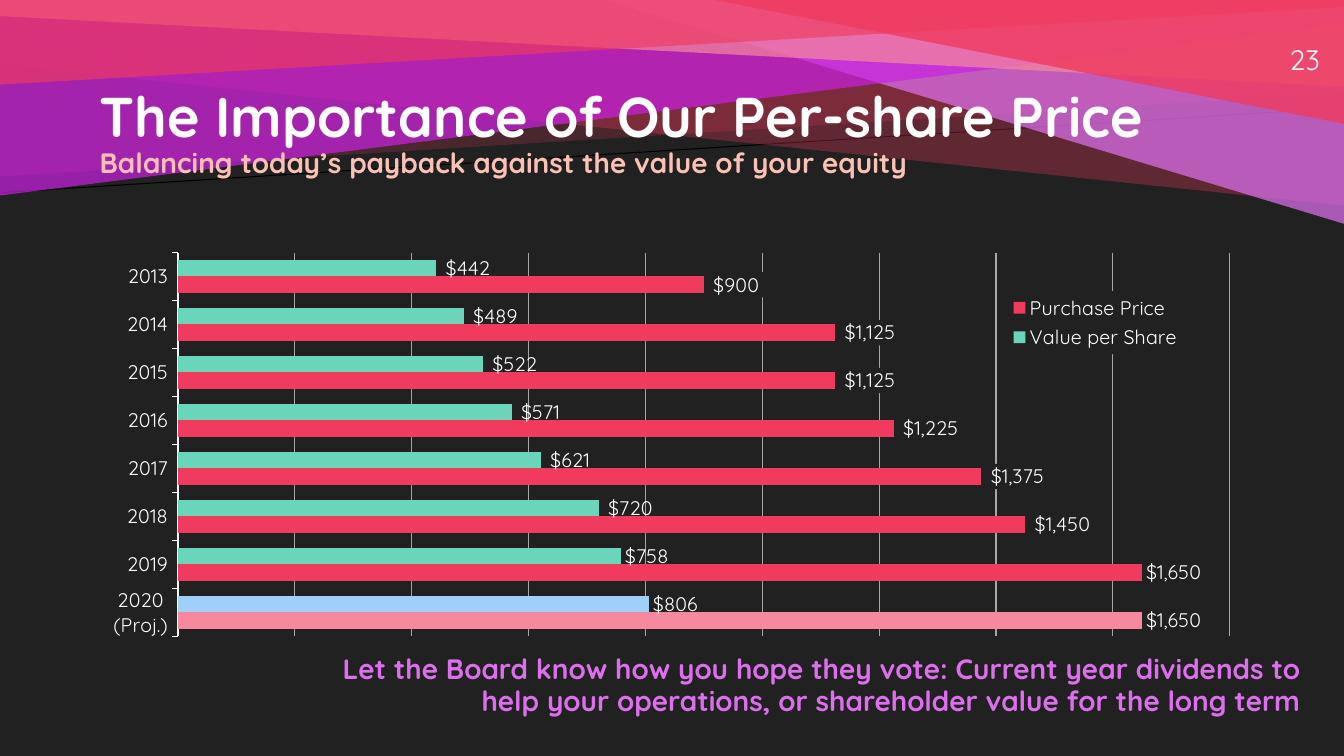
from lxml import etree
from pptx import Presentation
from pptx.chart.data import CategoryChartData
from pptx.dml.color import RGBColor
from pptx.enum.chart import XL_CHART_TYPE, XL_LABEL_POSITION, XL_LEGEND_POSITION, XL_TICK_MARK
from pptx.enum.shapes import MSO_CONNECTOR, MSO_SHAPE
from pptx.enum.text import MSO_ANCHOR, PP_ALIGN
from pptx.oxml import parse_xml
from pptx.oxml.ns import nsdecls, qn
from pptx.util import Inches, Pt

BAR = XL_CHART_TYPE.BAR_CLUSTERED
OUTSIDE_END = XL_LABEL_POSITION.OUTSIDE_END
LEGEND_RIGHT = XL_LEGEND_POSITION.RIGHT
TICK_OUT = XL_TICK_MARK.OUTSIDE
STRAIGHT = MSO_CONNECTOR.STRAIGHT
TRIANGLE = MSO_SHAPE.ISOSCELES_TRIANGLE
BOTTOM = MSO_ANCHOR.BOTTOM
LEFT, RIGHT = PP_ALIGN.LEFT, PP_ALIGN.RIGHT

W, H = 13.33, 7.5
FONT = "Quicksand"
DARK, WHITE, RED, VIOLET, ROSE = "212121", "FFFFFF", "F03B5E", "DC6FEC", "F6899E"
MONEY = '_("$"* #,##0_)'


def rgb(value):
    return RGBColor.from_string(value)


def write(p, text, size=20, color=WHITE, bold=False, shadow=False):
    r = p.add_run()
    r.text = text
    f = r.font
    f.name, f.size, f.bold = FONT, Pt(size), bold
    f.color.rgb = rgb(color)
    if shadow:
        f.fill._xPr.find(qn("a:solidFill")).addnext(parse_xml(
            f'<a:effectLst {nsdecls("a")}><a:outerShdw blurRad="38100" dist="38100" dir="2700000">'
            '<a:srgbClr val="000000"><a:alpha val="60000"/></a:srgbClr></a:outerShdw></a:effectLst>'))
    return r


def chart_layout(x, y, w, h, inner=False):
    target = '<c:layoutTarget val="inner"/>' if inner else ""
    return parse_xml(
        f'<c:layout {nsdecls("c")}><c:manualLayout>{target}'
        '<c:xMode val="edge"/><c:yMode val="edge"/>'
        f'<c:x val="{x}"/><c:y val="{y}"/><c:w val="{w}"/><c:h val="{h}"/>'
        '</c:manualLayout></c:layout>')


def add_backdrop(element):
    element.find(qn("c:txPr")).addprevious(parse_xml(
        f'<c:spPr {nsdecls("c", "a")}><a:solidFill><a:srgbClr val="{DARK}"/></a:solidFill></c:spPr>'))


class SlideBuilder:
    """Hold the slide and add styled elements to it."""

    def __init__(self, prs):
        self.slide = prs.slides.add_slide(prs.slide_layouts[6])
        self.shapes = self.slide.shapes
        fill = self.slide.background.fill
        fill.solid()
        fill.fore_color.rgb = rgb(DARK)

    def paint(self, sp, color, alpha):
        sp.shadow.inherit = False
        sp.fill.solid()
        sp.fill.fore_color.rgb = rgb(color)
        sp.line.fill.background()
        clr = sp._element.spPr.find(qn("a:solidFill"))[0]
        etree.SubElement(clr, qn("a:alpha")).set("val", str(alpha * 1000))

    def band(self, left_y, right_y, color, alpha):
        fb = self.shapes.build_freeform(0, Inches(left_y))
        fb.add_line_segments([(Inches(x), Inches(y)) for x, y in
                              ((0, 0), (W, 0), (W, right_y))])
        self.paint(fb.convert_to_shape(), color, alpha)

    def corner(self, x, y, w, h, color, alpha):
        sp = self.shapes.add_shape(TRIANGLE, Inches(x), Inches(y), Inches(w), Inches(h))
        sp.adjustments[0] = 1
        sp.rotation = 270
        self.paint(sp, color, alpha)

    def line(self, x1, y1, x2, y2, color, width):
        cn = self.shapes.add_connector(STRAIGHT, Inches(x1), Inches(y1), Inches(x2), Inches(y2))
        cn.line.color.rgb = rgb(color)
        cn.line.width = Pt(width)
        etree.SubElement(cn._element.spPr, qn("a:effectLst"))

    def text(self, x, y, w, h, runs, align=LEFT, spacing=1.0, bottom=0.05):
        tf = self.shapes.add_textbox(Inches(x), Inches(y), Inches(w), Inches(h)).text_frame
        tf.word_wrap = True
        tf.vertical_anchor = BOTTOM
        tf.margin_bottom = Inches(bottom)
        p = tf.paragraphs[0]
        p.alignment, p.line_spacing = align, spacing
        for i, (text, style) in enumerate(runs):
            if i:
                p.add_line_break()
            write(p, text, **style)

    def bar_chart(self, x, y, w, h, cats, series):
        data = CategoryChartData(number_format=MONEY)
        data.categories = cats
        for name, values, *_ in series:
            data.add_series(name, values)
        chart = self.shapes.add_chart(BAR, Inches(x), Inches(y), Inches(w), Inches(h), data).chart
        chart.has_title = False
        chart.font.name, chart.font.size = FONT, Pt(14)
        chart.font.color.rgb = rgb(WHITE)
        plot = chart.plots[0]
        plot.gap_width, plot.overlap, plot.vary_by_categories = 95, 0, False
        for s, (_, values, color, projected, backed) in zip(plot.series, series):
            self.style_series(s, values, color, projected, backed)
        self.style_axes(chart)
        self.style_legend(chart)
        area = chart._chartSpace.chart.plotArea
        for old in area.findall(qn("c:layout")):
            area.remove(old)
        area.insert(0, chart_layout(0.075, 0.019, 0.904, 0.957, inner=True))

    def style_series(self, s, values, color, projected, backed):
        last = len(values) - 1
        for part, c in ((s, color), (s.points[last], projected)):
            part.format.fill.solid()
            part.format.fill.fore_color.rgb = rgb(c)
        labels = s.data_labels
        labels.show_value, labels.position = True, OUTSIDE_END
        labels.number_format, labels.number_format_is_linked = MONEY, False
        labels.font.name, labels.font.size = FONT, Pt(14)
        labels.font.color.rgb = rgb(WHITE)
        if backed:
            add_backdrop(labels._element)
        for i in (last - 1, last):
            label = s.points[i].data_label
            write(label.text_frame.paragraphs[0], f"${values[i]:,}", size=14)
            label.position = OUTSIDE_END

    def style_axes(self, chart):
        years = chart.category_axis
        years.reverse_order = True
        years.major_tick_mark = TICK_OUT
        years.format.line.color.rgb = rgb(WHITE)
        dollars = chart.value_axis
        dollars.minimum_scale, dollars.maximum_scale, dollars.major_unit = 0, 1800, 200
        dollars.has_major_gridlines = True
        grid = dollars.major_gridlines.format.line
        grid.color.rgb, grid.width = rgb("A6A6A6"), Pt(0.75)
        dollars.visible = False

    def style_legend(self, chart):
        chart.has_legend = True
        legend = chart.legend
        legend.position, legend.include_in_layout = LEGEND_RIGHT, True
        legend.font.name, legend.font.size = FONT, Pt(14)
        legend.font.color.rgb = rgb(WHITE)
        element = legend._element
        for old in element.findall(qn("c:layout")):
            element.remove(old)
        element.find(qn("c:overlay")).addprevious(chart_layout(0.786, 0.115, 0.155, 0.157))
        add_backdrop(element)


def main():
    prs = Presentation()
    prs.slide_width, prs.slide_height = Inches(W), Inches(H)
    s = SlideBuilder(prs)

    s.line(0.02, 1.91, W, 1.07, "000000", 0.75)
    s.band(0.64, 2.04, RED, 30)
    s.band(1.75, 0.92, RED, 20)
    s.corner(8.51, -2.6, 2.24, 7.4, VIOLET, 72)
    s.band(1.94, 0.24, "C922E2", 70)
    s.band(0.16, 0.86, ROSE, 70)
    s.band(0.84, 0.07, RED, 65)
    s.corner(9.54, -2.57, 1.25, 6.35, RED, 80)

    strong = dict(bold=True, shadow=True)
    s.text(0.89, 0.77, 11.56, 1.06, [
        ("The Importance of Our Per-share Price", dict(size=40, color="FEFEFE", **strong)),
        ("Balancing today’s payback against the value of your equity",
         dict(color="FBC1B5", **strong))], spacing=0.9)
    s.bar_chart(
        0.9, 2.43, 11.54, 3.98,
        [str(year) for year in range(2013, 2020)] + ["2020 (Proj.)"],
        [("Value per Share", (442, 489, 522, 571, 621, 720, 758, 806), "6AD5BB", "A0D0F7", False),
         ("Purchase Price", (900, 1125, 1125, 1225, 1375, 1450, 1650, 1650), RED, ROSE, True)])
    s.text(12.03, 0.22, 1.16, 0.54, [("23", {})], align=RIGHT, bottom=0.01)
    s.text(3.28, 6.25, 9.72, 0.92, [
        ("Let the Board know how you hope they vote: Current year dividends to help your "
         "operations, or shareholder value for the long term", dict(color=VIOLET, **strong))],
        align=RIGHT, spacing=0.95)

    prs.save("out.pptx")


if __name__ == "__main__":
    main()
